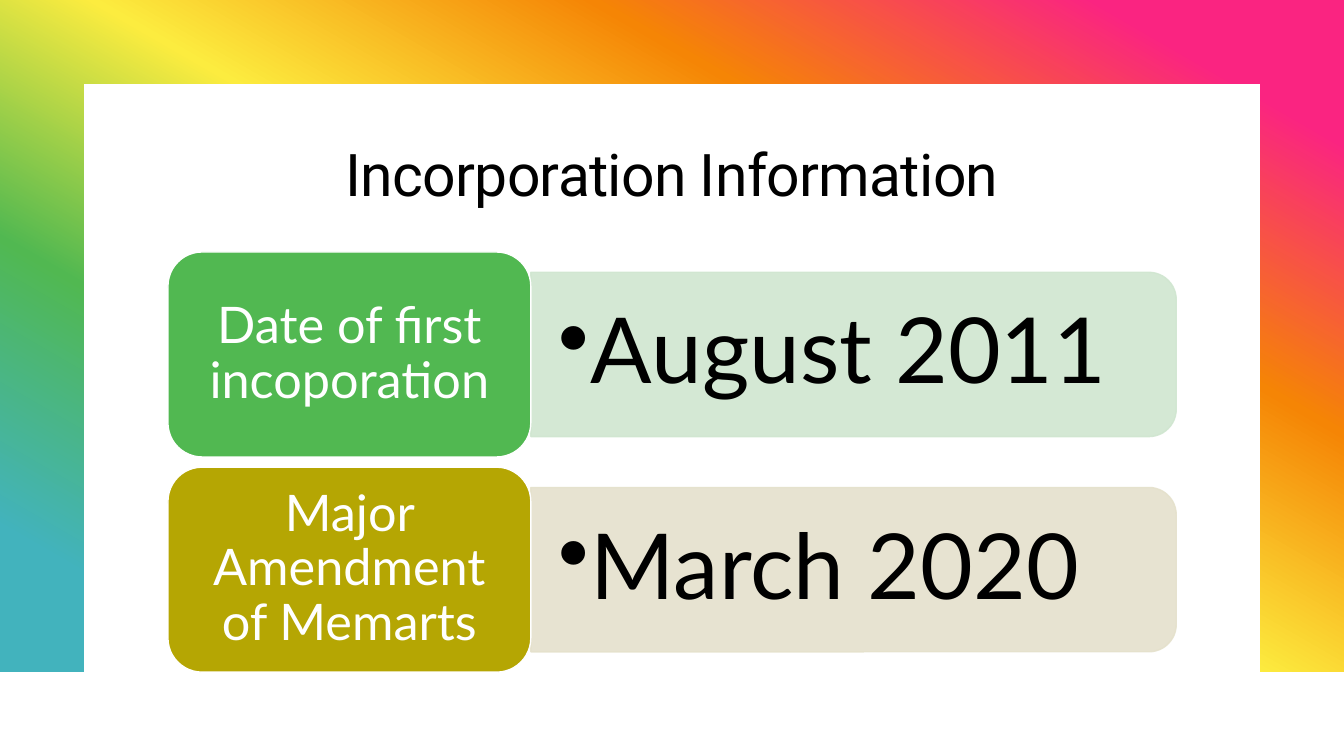
from lxml import etree
from pptx import Presentation, util as u
from pptx.dml import color
from pptx.enum import shapes, text
from pptx.oxml import ns

RAINBOW = [(10, "FA2481"), (30, "F58505"), (50, "FCEC3F"), (70, "51B851"), (90, "42B3BD")]
ROWS = [
    ("Date of first incoporation", "August 2011", "51B851", "D0E6D0"),
    ("Major Amendment of Memarts", "March 2020", "B5A603", "E5E1CC"),
]


def rgb(value):
    return color.RGBColor.from_string(value)


def add_node(parent, tag, **attributes):
    return etree.SubElement(parent, ns.qn(tag), {k: str(v) for k, v in attributes.items()})


class SlideBuilder:
    """Holds the fonts and the current page; all lengths are in points."""

    title_font = "Roboto"
    body_font = "Lato"

    def __init__(self, page):
        self.page = page

    def shape(self, kind, left, top, width, height, fill, line=None, opacity=100):
        box = self.page.shapes.add_shape(kind, *map(u.Pt, (left, top, width, height)))
        box.shadow.inherit = False
        box.fill.solid()
        box.fill.fore_color.rgb = rgb(fill)
        if line:
            box.line.color.rgb = rgb(line)
            box.line.width = u.Pt(1)
        else:
            box.line.fill.background()
        if opacity < 100:
            for tint in box._element.spPr.iter(ns.qn("a:srgbClr")):
                add_node(tint, "a:alpha", val=opacity * 1000)
        return box

    def gradient(self, box, stops, angle):
        box.fill.gradient()
        box.fill.gradient_angle = 360 - angle
        stop_list = box._element.spPr.find(".//" + ns.qn("a:gsLst"))
        for old_stop in list(stop_list):
            stop_list.remove(old_stop)
        for position, value in stops:
            stop = add_node(stop_list, "a:gs", pos=position * 1000)
            add_node(stop, "a:srgbClr", val=value)

    def set_text(self, box, words, font, size, ink, align, spacing, margins):
        frame = box.text_frame
        frame.word_wrap = True
        frame.auto_size = text.MSO_AUTO_SIZE.NONE
        frame.vertical_anchor = text.MSO_ANCHOR.MIDDLE
        frame.margin_left = frame.margin_right = u.Pt(margins[0])
        frame.margin_top = frame.margin_bottom = u.Pt(margins[1])
        para = frame.paragraphs[0]
        para.alignment = align
        para.line_spacing = spacing
        span = para.add_run()
        span.text = words
        span.font.name = font
        span.font.size = u.Pt(size)
        span.font.color.rgb = rgb(ink)
        return para, span

    def text_box(self, left, top, width, height, words, size, ink, align, margins):
        box = self.page.shapes.add_textbox(*map(u.Pt, (left, top, width, height)))
        return self.set_text(box, words, self.body_font, size, ink, align, 0.9, margins)[0]

    def bullet(self, para, indent):
        para.level = 1
        props = para._p.get_or_add_pPr()
        props.set("marL", str(u.Pt(indent)))
        props.set("indent", str(-u.Pt(indent)))
        add_node(props, "a:buChar", char="•")

    def title(self, left, top, width, height, words):
        box = self.page.shapes.title
        box.left, box.top, box.width, box.height = map(u.Pt, (left, top, width, height))
        span = self.set_text(box, words, self.title_font, 42, "000000",
                             text.PP_ALIGN.CENTER, 0.95, (7.2, 3.6))[1]
        span._r.get_or_add_rPr().set("spc", "-50")
        # Bring the title in front of the panels
        self.page.shapes._spTree.append(box._element)

    def row(self, middle, label, value, strong, pale):
        kinds = shapes.MSO_SHAPE
        # Pale bar, turned so that its rounded corners face right
        length, depth, left = 461, 117.4, 379.2
        bar = self.shape(kinds.ROUND_2_SAME_RECTANGLE, left + (length - depth) / 2,
                         middle - length / 2, depth, length, pale, pale, 90)
        bar.rotation = 90
        para = self.text_box(left, middle - 53, 455, 106, value, 65, "000000",
                             text.PP_ALIGN.LEFT, (19.7, 9.8))
        self.bullet(para, 22.5)
        # Label tile and its words
        self.shape(kinds.ROUNDED_RECTANGLE, 120, middle - 73.2, 259.2, 146.4, strong, "FFFFFF")
        self.text_box(127.2, middle - 66, 244.8, 132, label, 36, "FFFFFF",
                      text.PP_ALIGN.CENTER, (10.8, 5.4))


def main():
    deck = Presentation()
    deck.slide_width, deck.slide_height = u.Pt(960), u.Pt(540)
    builder = SlideBuilder(deck.slides.add_slide(deck.slide_layouts[5]))

    # Rainbow frame with a white panel
    frame = builder.shape(shapes.MSO_SHAPE.RECTANGLE, 0, -0.5, 960, 480.5, "FFFFFF")
    builder.gradient(frame, RAINBOW, 120)
    builder.shape(shapes.MSO_SHAPE.RECTANGLE, 60, 60, 840, 420, "FFFFFF")

    # Title
    builder.title(120, 89.3, 720, 72.7, "Incorporation Information")

    # Dates
    for index, row in enumerate(ROWS):
        builder.row(253.2 + 153.7 * index, *row)

    deck.save("out.pptx")


if __name__ == "__main__":
    main()
